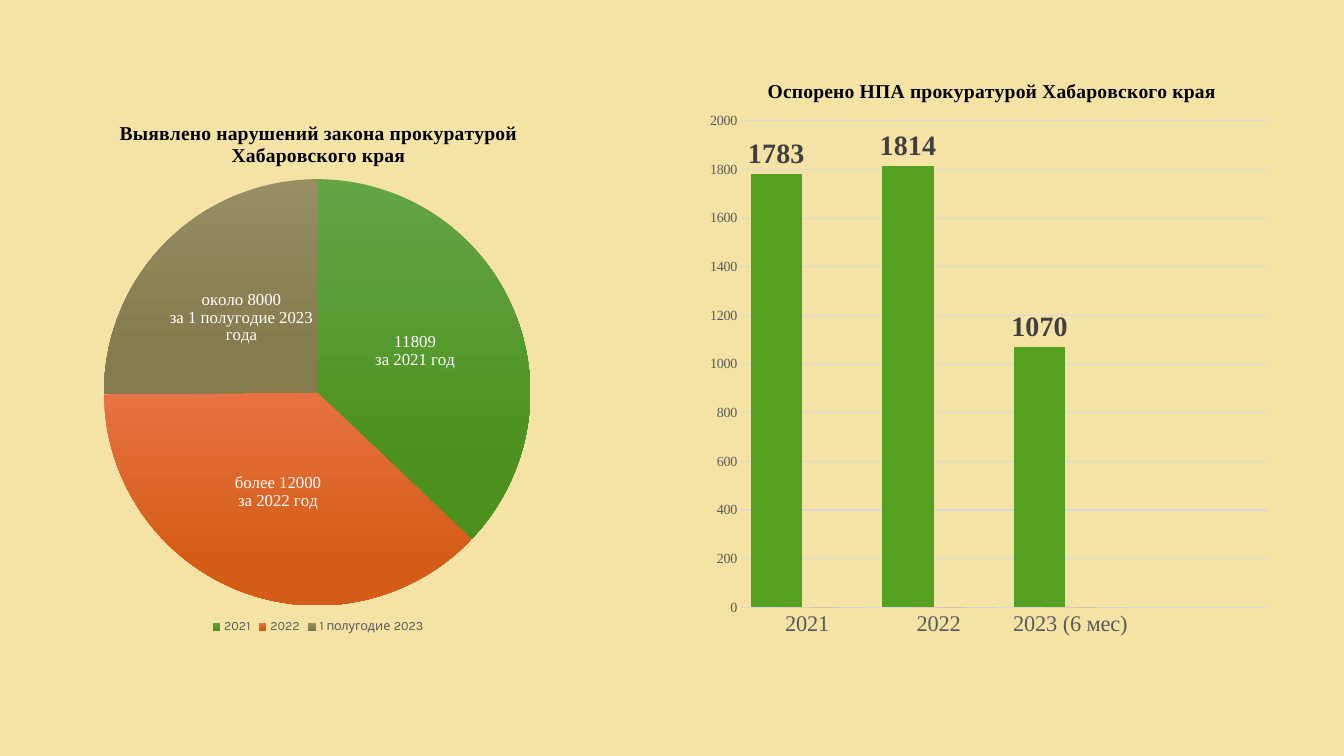
from lxml import etree
from pptx import Presentation
from pptx import util as u
from pptx.chart.data import CategoryChartData
from pptx.dml.color import RGBColor
from pptx.enum import chart as kinds
from pptx.oxml import ns

SERIF, SANS = "Times New Roman", "Karla"
GREY, GRID = "595959", "D9D9D9"


def color(value):
    return RGBColor.from_string(value)


def place(element, index, **fractions):
    """Fix a chart part at fractions of the chart's size."""
    for old in element.findall(ns.qn("c:layout")):
        element.remove(old)
    layout = etree.Element(ns.qn("c:layout"))
    manual = etree.SubElement(layout, ns.qn("c:manualLayout"))
    if "w" in fractions:
        etree.SubElement(manual, ns.qn("c:layoutTarget"), val="inner")
    for mode in ("xMode", "yMode"):
        etree.SubElement(manual, ns.qn(f"c:{mode}"), val="edge")
    for name, share in fractions.items():
        etree.SubElement(manual, ns.qn(f"c:{name}"), val=str(share))
    element.insert(index, layout)


class ChartSlide:
    def __init__(self, deck, background):
        self.slide = deck.slides.add_slide(deck.slide_layouts[6])
        fill = self.slide.background.fill
        fill.solid()
        fill.fore_color.rgb = color(background)

    def style(self, font, size, ink, name=SERIF, bold=False):
        font.name, font.size, font.bold = name, u.Pt(size), bold
        font.color.rgb = color(ink)

    def line(self, line):
        line.color.rgb = color(GRID)
        line.width = u.Pt(0.75)

    def chart(self, kind, box, categories, series, title, title_at, plot_at):
        data = CategoryChartData()
        data.categories = categories
        for number, values in enumerate(series, 1):
            data.add_series(f"Series {number}", values)
        frame = self.slide.shapes.add_chart(kind, *map(u.Cm, box), data)
        chart = frame.chart
        self.style(chart.font, 10, "000000", SANS)
        chart.has_title = True
        para = chart.chart_title.text_frame.paragraphs[0]
        span = para.add_run()
        span.text = title
        self.style(para.font, 14, "000000", bold=True)
        self.style(span.font, 14, "000000", bold=True)
        chart.chart_title.include_in_layout = False
        place(chart.chart_title._element, 1, x=title_at[0], y=title_at[1])
        place(chart._chartSpace.chart.plotArea, 0, **dict(zip("xywh", plot_at)))
        chart.has_legend = False
        return chart

    def legend(self, chart, x, y):
        chart.has_legend = True
        legend = chart.legend
        legend.position = kinds.XL_LEGEND_POSITION.BOTTOM
        legend.include_in_layout = False
        self.style(legend.font, 9, GREY, SANS)
        place(legend._element, 1, x=x, y=y)

    def labels(self, series, size, ink, position, bold=False):
        labels = series.data_labels
        labels.show_value = True
        labels.position = position
        self.style(labels.font, size, ink, bold=bold)

    def slice(self, point, light, dark, lines):
        """Shade one slice from top to bottom and write its label."""
        fill = point.format.fill
        fill.gradient()
        fill.gradient_angle = 270
        for stop, place_at, shade in zip(fill.gradient_stops, (0, 0.78), (light, dark)):
            stop.position = place_at
            stop.color.rgb = color(shade)
        frame = point.data_label.text_frame
        for number, line in enumerate(lines):
            para = frame.add_paragraph() if number else frame.paragraphs[0]
            span = para.add_run()
            span.text = line
            self.style(span.font, 12, "FFFFFF")
        point.data_label.position = kinds.XL_LABEL_POSITION.CENTER

    def axes(self, chart, top, step):
        category, value = chart.category_axis, chart.value_axis
        for axis, size in ((category, 16), (value, 10)):
            axis.major_tick_mark = axis.minor_tick_mark = kinds.XL_TICK_MARK.NONE
            self.style(axis.tick_labels.font, size, GREY)
        self.line(category.format.line)
        value.format.line.fill.background()
        value.minimum_scale, value.maximum_scale, value.major_unit = 0, top, step
        value.has_major_gridlines = True
        self.line(value.major_gridlines.format.line)


def main():
    deck = Presentation()
    deck.slide_width, deck.slide_height = u.Cm(33.87), u.Cm(19.05)
    page = ChartSlide(deck, "F5E3A5")

    violations = page.chart(
        kinds.XL_CHART_TYPE.PIE, (1.14, 2.39, 13.72, 13.72),
        ["2021", "2022", "1 полугодие 2023"], [(11809, 12000, 8000)],
        "Выявлено нарушений закона прокуратурой Хабаровского края",
        (0.13, 0.04), (0.108, 0.155, 0.783, 0.783))
    page.legend(violations, 0.3, 0.98)
    pie = violations.plots[0].series[0]
    page.labels(pie, 12, "FFFFFF", kinds.XL_LABEL_POSITION.CENTER)
    slices = [
        ("63A545", "4D921E", ["11809", "за 2021 год"]),
        ("E87242", "D35D16", ["более 12000", "за 2022 год"]),
        ("988E64", "857B4E", ["около 8000", "за 1 полугодие 2023 года"]),
    ]
    for index, look in enumerate(slices):
        page.slice(pie.points[index], *look)

    disputed = page.chart(
        kinds.XL_CHART_TYPE.COLUMN_CLUSTERED, (17.58, 1.3, 14.68, 15.06),
        ["2021", "2022", "2023 (6 мес)", ""],
        [(1783, 1814, 1070, None), (0, 0, 0, None), (0, 0, 0, None)],
        "Оспорено НПА прокуратурой Хабаровского края",
        (0.114, 0.038), (0.075, 0.116, 0.904, 0.814))
    page.axes(disputed, 2000, 200)
    columns = disputed.plots[0]
    columns.gap_width, columns.overlap = 37, 40
    columns.vary_by_categories = False
    for series, shade in zip(columns.series, ("54A021", "E76618", "918655")):
        series.format.fill.solid()
        series.format.fill.fore_color.rgb = color(shade)
    page.labels(columns.series[0], 20, "404040",
                kinds.XL_LABEL_POSITION.OUTSIDE_END, bold=True)
    deck.save("out.pptx")


if __name__ == "__main__":
    main()
